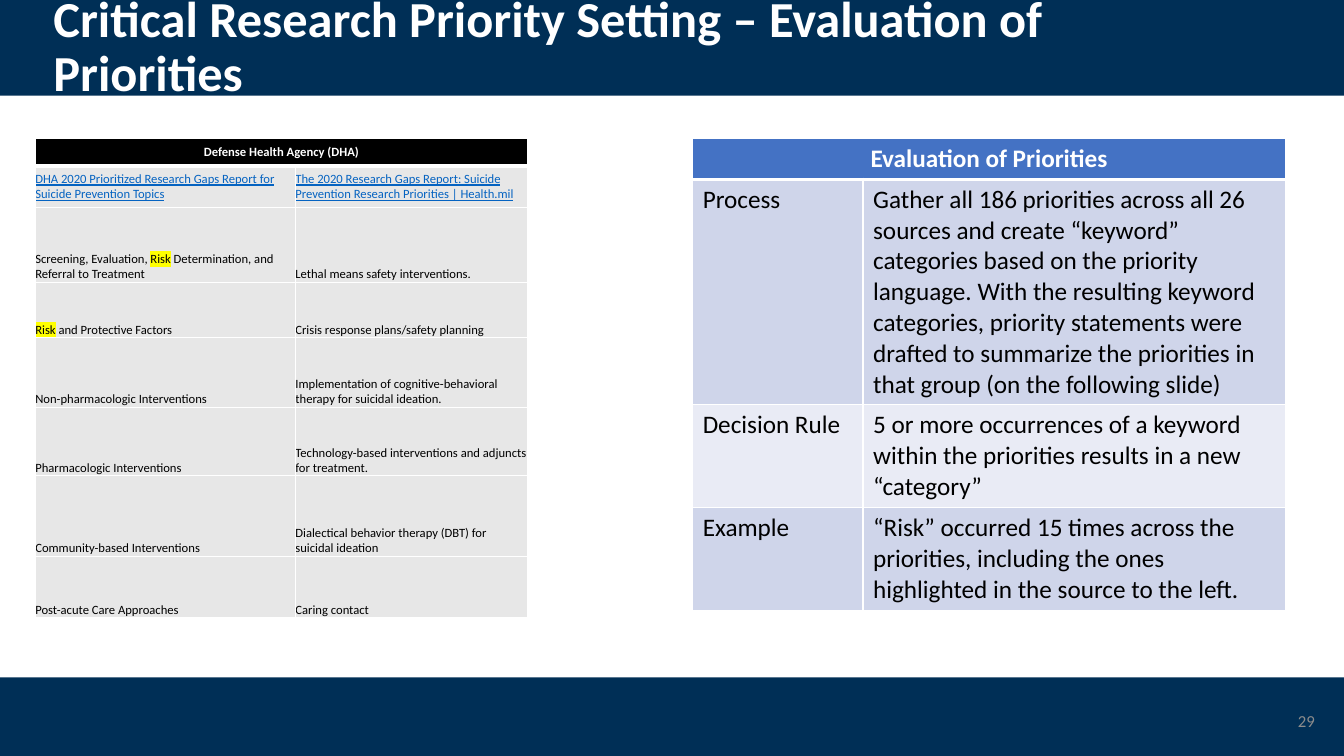
from dataclasses import dataclass
from typing import Any, Optional

from lxml import etree
from pptx import Presentation
from pptx.dml.color import RGBColor
from pptx.enum.shapes import MSO_SHAPE
from pptx.enum.text import MSO_ANCHOR, MSO_AUTO_SIZE, PP_ALIGN
from pptx.oxml.ns import qn
from pptx.util import Inches, Pt

RECTANGLE = MSO_SHAPE.RECTANGLE
TOP, MIDDLE, BOTTOM = MSO_ANCHOR.TOP, MSO_ANCHOR.MIDDLE, MSO_ANCHOR.BOTTOM
LEFT, CENTER, RIGHT = PP_ALIGN.LEFT, PP_ALIGN.CENTER, PP_ALIGN.RIGHT
NO_AUTOFIT = MSO_AUTO_SIZE.NONE

FONT = "Calibri"
NAVY, WHITE, BLACK, GRAY = "002F56", "FFFFFF", "000000", "8C8C8C"
LINK_BLUE, YELLOW = "0563C1", "FFFF00"
LIGHT_GRAY, BLUE, BAND_DARK, BAND_LIGHT = "E7E7E7", "4472C4", "CFD5EA", "E9EBF5"


@dataclass
class Bar:
    top: float
    height: float


@dataclass
class TableRow:
    height: float
    texts: list[str]
    fill: str
    anchor: Any = TOP
    color: str = BLACK
    underline: bool = False


@dataclass
class TableSpec:
    left: float
    top: float
    columns: list[float]
    rows: list[TableRow]
    size: int
    insets: tuple[float, float]
    keyword: Optional[str] = None


BARS = [Bar(0, 0.95), Bar(6.72, 0.8)]

INTERVENTIONS = [
    (0.74, "Screening, Evaluation, Risk Determination, and Referral to Treatment",
     "Lethal means safety interventions."),
    (0.55, "Risk and Protective Factors", "Crisis response plans/safety planning"),
    (0.69, "Non-pharmacologic Interventions",
     "Implementation of cognitive-behavioral therapy for suicidal ideation."),
    (0.68, "Pharmacologic Interventions",
     "Technology-based interventions and adjuncts for treatment."),
    (0.8, "Community-based Interventions",
     "Dialectical behavior therapy (DBT) for suicidal ideation"),
    (0.61, "Post-acute Care Approaches", "Caring contact"),
]

AGENCY_TABLE = TableSpec(
    0.35, 1.37, [2.58, 2.3],
    [
        TableRow(0.28, ["Defense Health Agency (DHA)"], BLACK, MIDDLE, WHITE),
        TableRow(0.41, [
            "DHA 2020 Prioritized Research Gaps Report for Suicide Prevention Topics",
            "The 2020 Research Gaps Report: Suicide Prevention Research Priorities | Health.mil",
        ], LIGHT_GRAY, MIDDLE, LINK_BLUE, True),
    ] + [TableRow(height, texts, LIGHT_GRAY, BOTTOM) for height, *texts in INTERVENTIONS],
    9, (0, 0), "Risk",
)

EVALUATION_TABLE = TableSpec(
    6.87, 1.37, [1.69, 4.19],
    [
        TableRow(0.41, ["Evaluation of Priorities"], BLUE, color=WHITE),
        TableRow(2.22, [
            "Process",
            "Gather all 186 priorities across all 26 sources and create “keyword” categories "
            "based on the priority language. With the resulting keyword categories, priority "
            "statements were drafted to summarize the priorities in that group "
            "(on the following slide)",
        ], BAND_DARK),
        TableRow(1.02, [
            "Decision Rule",
            "5 or more occurrences of a keyword within the priorities results in a new “category”",
        ], BAND_LIGHT),
        TableRow(1.02, [
            "Example",
            "“Risk” occurred 15 times across the priorities, including the ones highlighted "
            "in the source to the left.",
        ], BAND_DARK),
    ],
    18, (0.1, 0.05),
)


def rgb(value: str) -> RGBColor:
    return RGBColor.from_string(value)


def set_values(target: Any, values: dict[str, Any]) -> None:
    for name, value in values.items():
        setattr(target, name, value)


def add_run(paragraph: Any, text: str, size: int, color: str, **values: Any) -> Any:
    run = paragraph.add_run()
    run.text = text
    set_values(run.font, {"name": FONT, "size": Pt(size), **values})
    run.font.color.rgb = rgb(color)
    return run


def highlight(run: Any) -> None:
    element = etree.Element(qn("a:highlight"))
    etree.SubElement(element, qn("a:srgbClr"), val=YELLOW)
    run.font.fill
    run.font._element.find(qn("a:latin")).addprevious(element)


def set_borders(cell: Any, widths: dict[str, float]) -> None:
    properties = cell._tc.get_or_add_tcPr()
    for index, (side, width) in enumerate(widths.items()):
        line = etree.Element(qn(f"a:ln{side}"), w=str(Pt(width)))
        fill = etree.SubElement(line, qn("a:solidFill"))
        etree.SubElement(fill, qn("a:srgbClr"), val=WHITE)
        properties.insert(index, line)


def write_cell(cell: Any, text: str, row: TableRow, spec: TableSpec, header: bool) -> None:
    horizontal, vertical = (Inches(inset) for inset in spec.insets)
    set_values(cell, {
        "margin_left": horizontal, "margin_right": horizontal,
        "margin_top": vertical, "margin_bottom": vertical,
        "vertical_anchor": row.anchor,
    })
    paragraph = cell.text_frame.paragraphs[0]
    paragraph.alignment = CENTER if header else LEFT
    parts = text.partition(spec.keyword) if spec.keyword else (text,)
    for part in filter(None, parts):
        run = add_run(paragraph, part, spec.size, row.color,
                      bold=header, underline=row.underline)
        if part == spec.keyword:
            highlight(run)


def add_table(slide: Any, spec: TableSpec) -> None:
    table = slide.shapes.add_table(
        len(spec.rows), len(spec.columns), Inches(spec.left), Inches(spec.top),
        Inches(sum(spec.columns)), Inches(sum(row.height for row in spec.rows))).table
    set_values(table, {"first_row": False, "horz_banding": False})
    for column, width in zip(table.columns, spec.columns):
        column.width = Inches(width)
    table.cell(0, 0).merge(table.cell(0, len(spec.columns) - 1))
    for index, row in enumerate(spec.rows):
        table.rows[index].height = Inches(row.height)
        borders = {"L": 1, "R": 1, "T": 3 if index == 1 else 1, "B": 3 if index == 0 else 1}
        for cell in table.rows[index].cells:
            cell.fill.solid()
            cell.fill.fore_color.rgb = rgb(row.fill)
            set_borders(cell, borders)
        for column, text in enumerate(row.texts):
            write_cell(table.cell(index, column), text, row, spec, index == 0)


def add_bar(slide: Any, bar: Bar, width: int) -> None:
    shape = slide.shapes.add_shape(RECTANGLE, 0, Inches(bar.top), width, Inches(bar.height))
    shape.shadow.inherit = False
    shape.fill.solid()
    shape.fill.fore_color.rgb = rgb(NAVY)
    shape.line.fill.background()
    slide.shapes.title.element.addprevious(shape.element)


def main() -> None:
    presentation = Presentation()
    set_values(presentation, {"slide_width": Inches(13.33), "slide_height": Inches(7.5)})
    slide = presentation.slides.add_slide(presentation.slide_layouts[5])
    for bar in BARS:
        add_bar(slide, bar, presentation.slide_width)

    title = slide.shapes.title
    set_values(title, {"left": Inches(0.43), "top": Inches(0.11),
                       "width": Inches(11.5), "height": Inches(0.74)})
    number = slide.shapes.add_textbox(Inches(10.14), Inches(6.95), Inches(3), Inches(0.4))
    for shape in (title, number):
        set_values(shape.text_frame, {"word_wrap": True, "auto_size": NO_AUTOFIT,
                                      "vertical_anchor": MIDDLE})
    heading = title.text_frame.paragraphs[0]
    set_values(heading, {"alignment": LEFT, "line_spacing": 0.9})
    add_run(heading, "Critical Research Priority Setting – Evaluation of Priorities",
            36, WHITE, bold=True)
    number_paragraph = number.text_frame.paragraphs[0]
    number_paragraph.alignment = RIGHT
    add_run(number_paragraph, "29", 12, GRAY)

    for spec in (AGENCY_TABLE, EVALUATION_TABLE):
        add_table(slide, spec)
    presentation.save("out.pptx")


if __name__ == "__main__":
    main()
